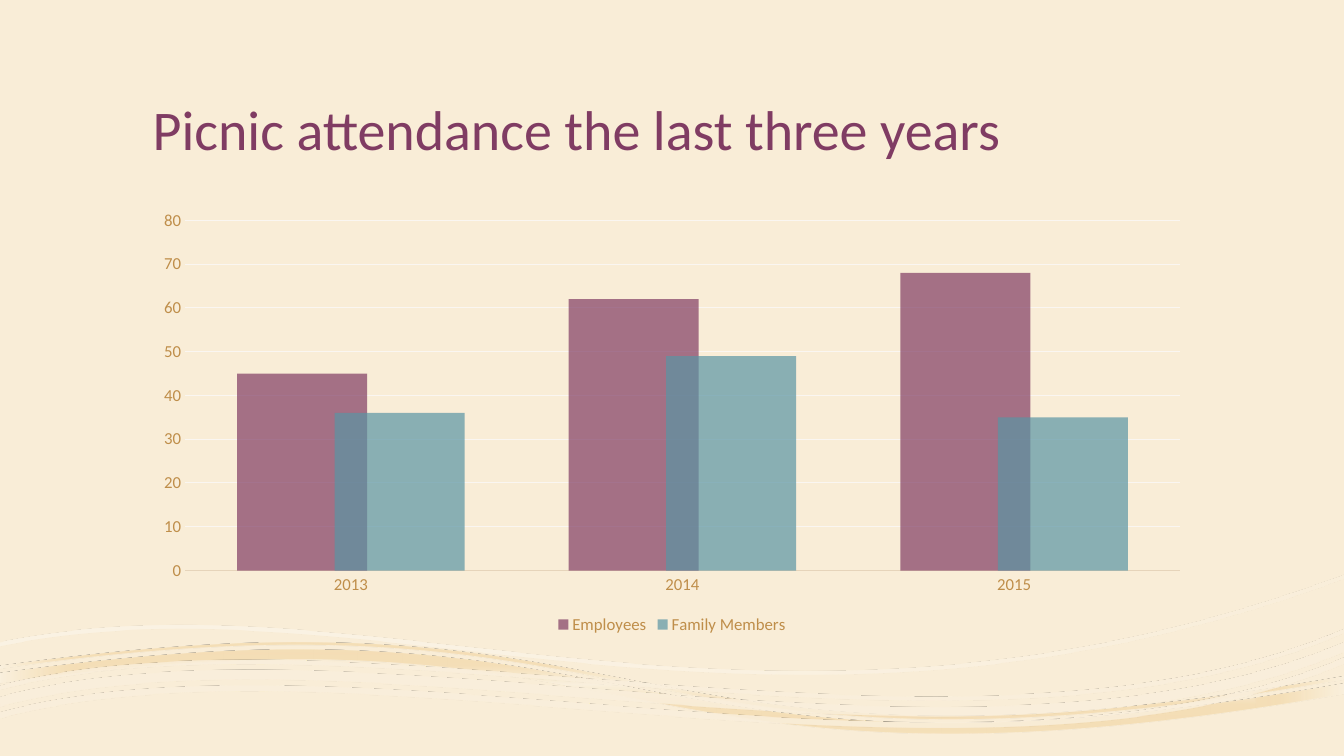
from math import cos, radians, sin

from lxml import etree
from pptx import Presentation
from pptx.chart.data import CategoryChartData
from pptx.dml.color import RGBColor
from pptx.enum.chart import XL_CHART_TYPE, XL_LEGEND_POSITION, XL_TICK_MARK
from pptx.enum.text import MSO_ANCHOR
from pptx.oxml.ns import qn
from pptx.util import Cm, Pt

COLUMNS = XL_CHART_TYPE.COLUMN_CLUSTERED
LEGEND_BOTTOM = XL_LEGEND_POSITION.BOTTOM
NO_TICK = XL_TICK_MARK.NONE
ANCHOR_BOTTOM = MSO_ANCHOR.BOTTOM

TITLE = "Picnic attendance the last three years"
YEARS = ["2013", "2014", "2015"]
ATTENDANCE = {"Employees": [45, 62, 68], "Family Members": [36, 49, 35]}

THEME = {
    "font": "Calibri",
    "title_size": 40,
    "label_size": 12,
    "background": "F9EDD7",
    "title": "803C63",
    "label": "BF8E4A",
    "axis": "E6D4BA",
    "grid": "FAF6F1",
    "series": ["803C63", "5A95A4"],
    "series_opacity": 70,
    "gold": [(0, "FAF1DF", 90), (18, "F4DEB7", 100), (37, "F4DDB3", 90), (100, "FAF1DF", 100)],
    "mist": [(36, "FFFFFF", 30), (100, "F9EDD7", 48)],
    "cream": [(36, "FFFFFF", 47), (100, "FAEFDC", 82)],
}

SLIDE_SIZE = (33.87, 19.05)
TITLE_BOX = (3.6, 0.84, 26.67, 3.38)
CHART_BOX = (3.6, 5.08, 26.67, 11.01)
WAVE_TILT = -3.5

GOLD_TOP = [(0, 16.97), (3.15, 16.54), (5.64, 16.36), (7.77, 16.38),
            (17.02, 16.43), (18.75, 19.86), (33.87, 17.22)]
GOLD_BOTTOM = [(0, 17.22), (16.94, 14.81), (15.29, 20.73), (33.87, 17.48)]
MIST_TOP = [(0, 16.18), (9.47, 14.2), (19.15, 19.91), (33.87, 14.48)]
CREAM_LOW = [(0, 17.93), (8.86, 15.54), (24.26, 20.57), (33.87, 16.56)]
CREAM_HIGH = [(0, 17.27), (8.92, 14.96), (24.33, 19.96), (33.87, 15.85)]


def lowered(edge, distance):
    return [(x, y + distance) for x, y in edge]


def band(edge, thickness):
    return edge, lowered(edge, thickness)


WAVES = [
    ("gold", (0.03, 15.54, 33.81, 3.43), ("path", "shape", (50, 50, 50, 50)),
     [(GOLD_TOP, GOLD_BOTTOM), (lowered(GOLD_TOP, -0.18), lowered(GOLD_BOTTOM, -0.36))]),
    ("mist", (0.08, 14.94, 33.91, 4.34), ("lin", 45, None), [band(MIST_TOP, 0.1)]),
    ("cream", (-0.03, 15.88, 33.93, 2.92), ("path", "rect", (100, 100, 0, 0)),
     [band(CREAM_LOW, 0.15), band(lowered(CREAM_LOW, -0.38), 0.24), band(CREAM_HIGH, 0.1)]),
]


def rgb(name):
    return RGBColor.from_string(THEME[name])


def lengths(box):
    return [Cm(value) for value in box]


def add_alpha(color, opacity):
    if opacity < 100:
        etree.SubElement(color, qn("a:alpha"), val=str(opacity * 1000))


def set_gradient(shape, stops, direction):
    gradient = etree.Element(qn("a:gradFill"), rotWithShape="1")
    stop_list = etree.SubElement(gradient, qn("a:gsLst"))
    for position, color, opacity in stops:
        stop = etree.SubElement(stop_list, qn("a:gs"), pos=str(position * 1000))
        add_alpha(etree.SubElement(stop, qn("a:srgbClr"), val=color), opacity)
    kind, value, focus = direction
    if kind == "lin":
        etree.SubElement(gradient, qn("a:lin"), ang=str(value * 60000), scaled="0")
    else:
        route = etree.SubElement(gradient, qn("a:path"))
        route.set("path", value)
        sides = {side: str(share * 1000) for side, share in zip("ltrb", focus)}
        etree.SubElement(route, qn("a:fillToRect"), **sides)
    shape.fill.background()
    properties = shape._element.spPr
    properties.replace(properties.find(qn("a:noFill")), gradient)


def untilted(point, box):
    left, top, width, height = box
    dx, dy = point[0] - left - width / 2, point[1] - top - height / 2
    turn = radians(-WAVE_TILT)
    return (Cm(dx * cos(turn) - dy * sin(turn) + width / 2),
            Cm(dx * sin(turn) + dy * cos(turn) + height / 2))


def add_step(outline, kind, points, box):
    step = etree.SubElement(outline, qn(kind))
    for point in points:
        x, y = untilted(point, box)
        etree.SubElement(step, qn("a:pt"), x=str(x), y=str(y))


def add_curves(outline, edge, box):
    for first in range(1, len(edge), 3):
        add_step(outline, "a:cubicBezTo", edge[first:first + 3], box)


def add_wave(page, color, box, direction, ribbons):
    left, top, width, height = lengths(box)
    builder = page.shapes.build_freeform(left, top, scale=1.0)
    builder.add_line_segments(
        [(left + width, top), (left + width, top + height), (left, top + height)])
    wave = builder.convert_to_shape()
    outline = next(wave._element.iter(qn("a:path")))
    for step in list(outline):
        outline.remove(step)
    for upper, lower in ribbons:
        add_step(outline, "a:moveTo", upper[:1], box)
        add_curves(outline, upper, box)
        add_step(outline, "a:lnTo", lower[-1:], box)
        add_curves(outline, lower[::-1], box)
        etree.SubElement(outline, qn("a:close"))
    wave.rotation = WAVE_TILT
    wave.shadow.inherit = False
    wave.line.fill.background()
    set_gradient(wave, THEME[color], direction)


def add_title(page):
    box = page.shapes.add_textbox(*lengths(TITLE_BOX))
    frame = box.text_frame
    frame.word_wrap = True
    frame.vertical_anchor = ANCHOR_BOTTOM
    para = frame.paragraphs[0]
    para.line_spacing = 0.9
    span = para.add_run()
    span.text = TITLE
    span.font.name = THEME["font"]
    span.font.size = Pt(THEME["title_size"])
    span.font.color.rgb = rgb("title")


def set_label_font(font):
    font.name = THEME["font"]
    font.size = Pt(THEME["label_size"])
    font.color.rgb = rgb("label")


def add_attendance_chart(page):
    data = CategoryChartData()
    data.categories = YEARS
    for name, values in ATTENDANCE.items():
        data.add_series(name, values)
    chart = page.shapes.add_chart(COLUMNS, *lengths(CHART_BOX), data).chart
    chart.has_title = False
    chart.has_legend = True
    chart.legend.position = LEGEND_BOTTOM
    chart.legend.include_in_layout = False
    set_label_font(chart.legend.font)

    years, counts = chart.category_axis, chart.value_axis
    for axis in (years, counts):
        axis.major_tick_mark = axis.minor_tick_mark = NO_TICK
        set_label_font(axis.tick_labels.font)
    counts.minimum_scale, counts.maximum_scale, counts.major_unit = 0, 80, 10
    counts.format.line.fill.background()
    for line, color, width in ((years.format.line, "axis", 1.25),
                               (counts.major_gridlines.format.line, "grid", 0.75)):
        line.color.rgb = rgb(color)
        line.width = Pt(width)

    plot = chart.plots[0]
    plot.vary_by_categories = False
    plot.gap_width, plot.overlap = 80, 25
    for series, color in zip(plot.series, THEME["series"]):
        series.invert_if_negative = False
        series.format.fill.solid()
        series.format.fill.fore_color.rgb = RGBColor.from_string(color)
        solid = series._element.find(qn("c:spPr")).find(qn("a:solidFill"))
        add_alpha(solid[0], THEME["series_opacity"])


def main():
    deck = Presentation()
    deck.slide_width, deck.slide_height = lengths(SLIDE_SIZE)
    page = deck.slides.add_slide(deck.slide_layouts[6])
    page.background.fill.solid()
    page.background.fill.fore_color.rgb = rgb("background")
    for wave in WAVES:
        add_wave(page, *wave)
    add_title(page)
    add_attendance_chart(page)
    deck.save("out.pptx")


if __name__ == "__main__":
    main()
